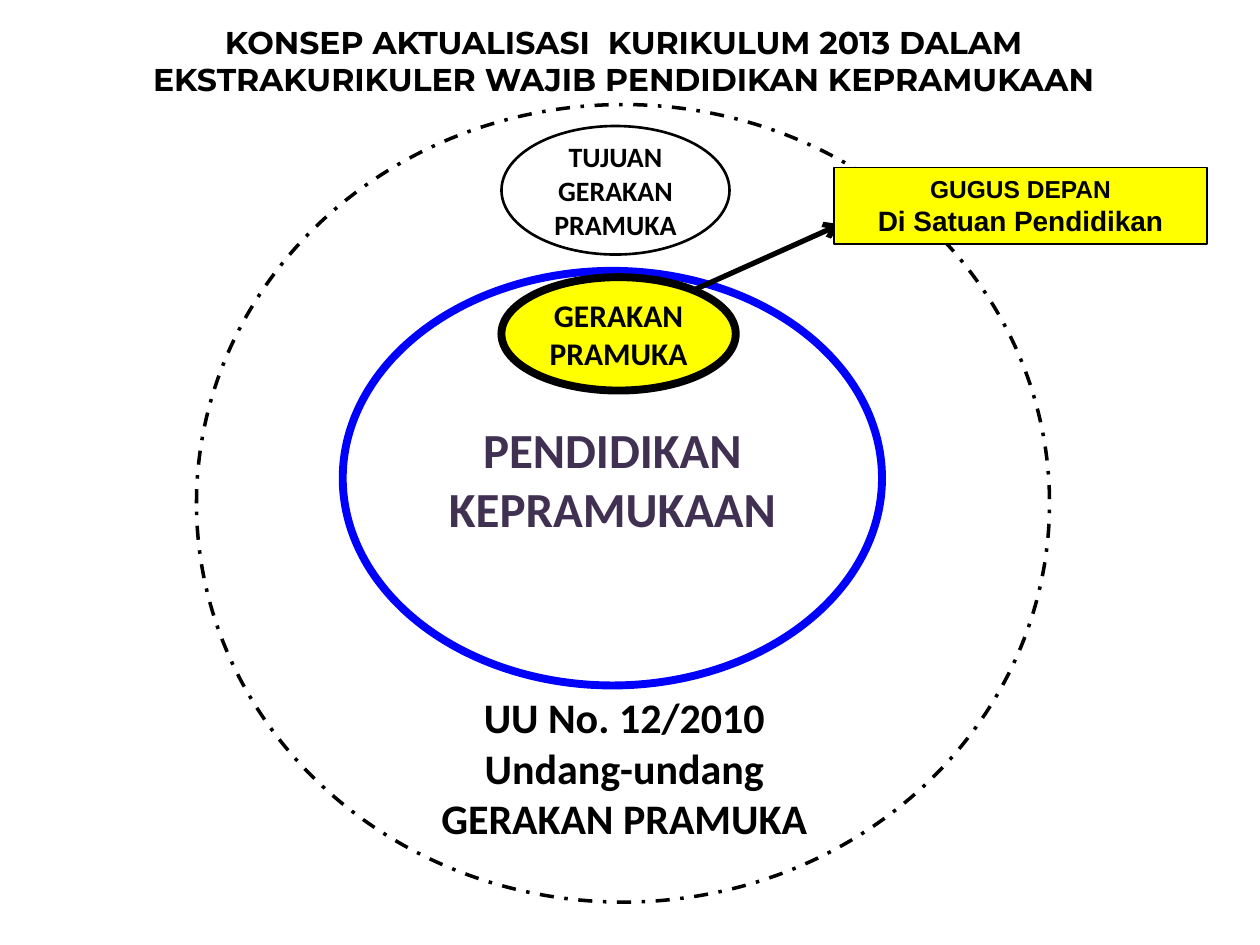
import pptx
import pptx.dml.color
import pptx.enum.dml
import pptx.enum.shapes
import pptx.enum.text
import pptx.oxml
import pptx.oxml.ns
import pptx.util

Inches = pptx.util.Inches
SHAPE = pptx.enum.shapes.MSO_SHAPE
ANCHOR = pptx.enum.text.MSO_ANCHOR
BLACK, YELLOW, BLUE, PURPLE = "000000", "FFFF00", "0000FF", "403152"


def rgb(value):
    """Turn a hex string into a colour."""
    return pptx.dml.color.RGBColor.from_string(value)


def write(holder, lines, font="Calibri", color=BLACK, anchor=ANCHOR.MIDDLE):
    """Write centred bold lines, each a (text, size) pair."""
    frame = holder.text_frame
    for key, value in {"word_wrap": True, "vertical_anchor": anchor}.items():
        setattr(frame, key, value)
    for index, (text, size) in enumerate(lines):
        paragraph = frame.add_paragraph() if index else frame.paragraphs[0]
        paragraph.alignment = pptx.enum.text.PP_ALIGN.CENTER
        run = paragraph.add_run()
        run.text = text
        run.font.color.rgb = rgb(color)
        style = {"name": font, "size": pptx.util.Pt(size), "bold": True}
        for key, value in style.items():
            setattr(run.font, key, value)


def outline(line, color, width):
    """Set the colour and width of a line."""
    line.color.rgb = rgb(color)
    line.width = pptx.util.Pt(width)


def add_figure(slide, kind, box, width, color=BLACK, fill=None):
    """Add an outlined preset shape, filled only if a fill is given."""
    figure = slide.shapes.add_shape(kind, *map(Inches, box))
    figure.shadow.inherit = False
    outline(figure.line, color, width)
    if fill:
        figure.fill.solid()
        figure.fill.fore_color.rgb = rgb(fill)
    else:
        figure.fill.background()
    return figure


def add_label(slide, box, lines, font="Calibri"):
    """Add a text box of centred lines."""
    label = slide.shapes.add_textbox(*map(Inches, box))
    write(label, lines, font, anchor=ANCHOR.TOP)


def add_arrow(slide, start, end):
    """Add a thick arrow with an open head."""
    arrow = slide.shapes.add_connector(
        pptx.enum.shapes.MSO_CONNECTOR.STRAIGHT, *map(Inches, start + end))
    outline(arrow.line, BLACK, 3)
    head = pptx.oxml.parse_xml(
        f'<a:tailEnd {pptx.oxml.ns.nsdecls("a")} type="arrow"/>')
    arrow.line._get_or_add_ln().append(head)
    effects = pptx.oxml.parse_xml(f'<a:effectLst {pptx.oxml.ns.nsdecls("a")}/>')
    arrow._element.spPr.append(effects)


def add_title(slide, box):
    """Add the slide title."""
    title = ("KONSEP AKTUALISASI  KURIKULUM 2013 DALAM "
             "EKSTRAKURIKULER WAJIB PENDIDIKAN KEPRAMUKAAN")
    add_label(slide, box, [(title, 18)], "Montserrat")


def add_concept(slide, box):
    """Add the nested ellipses, the law and the scout unit."""
    left, top, _, _ = box

    def place(x, y, *size):
        return (left + x, top + y, *size)

    education = add_figure(slide, SHAPE.OVAL, place(1.16, 1.32, 4.28, 3.29), 4.5, BLUE)
    write(education, [("PENDIDIKAN", 28), ("KEPRAMUKAAN", 28)], color=PURPLE)

    movement = add_figure(slide, SHAPE.OVAL, place(2.42, 1.37, 1.86, 0.9), 4.5, fill=YELLOW)
    write(movement, [("GERAKAN PRAMUKA", 18)])

    goal = add_figure(slide, SHAPE.OVAL, place(2.42, 0.17, 1.81, 1.02), 1.5)
    write(goal, [("TUJUAN", 16), ("GERAKAN PRAMUKA", 16)])

    boundary = add_figure(slide, SHAPE.OVAL, box, 2)
    boundary.line.dash_style = pptx.enum.dml.MSO_LINE.DASH_DOT

    add_label(slide, place(1.77, 4.61, 3.25, 1.31),
              [("UU No. 12/2010", 24), ("Undang-undang GERAKAN PRAMUKA", 24)])
    add_arrow(slide, place(3.95, 1.47), place(5.11, 0.95))

    unit = add_figure(slide, SHAPE.RECTANGLE, place(5.06, 0.5, 2.96, 0.61), 1, fill=YELLOW)
    write(unit, [("GUGUS DEPAN", 14), ("Di Satuan Pendidikan", 16)], "Arial", anchor=ANCHOR.TOP)


def main():
    """Build and save the slide."""
    deck = pptx.Presentation()
    for key, value in {"slide_width": 10, "slide_height": 7.5}.items():
        setattr(deck, key, Inches(value))
    slide = deck.slides.add_slide(deck.slide_layouts[6])
    add_concept(slide, (1.56, 0.83, 6.77, 6.33))
    add_title(slide, (0.42, 0.13, 9.06, 0.71))
    deck.save("out.pptx")


if __name__ == "__main__":
    main()
